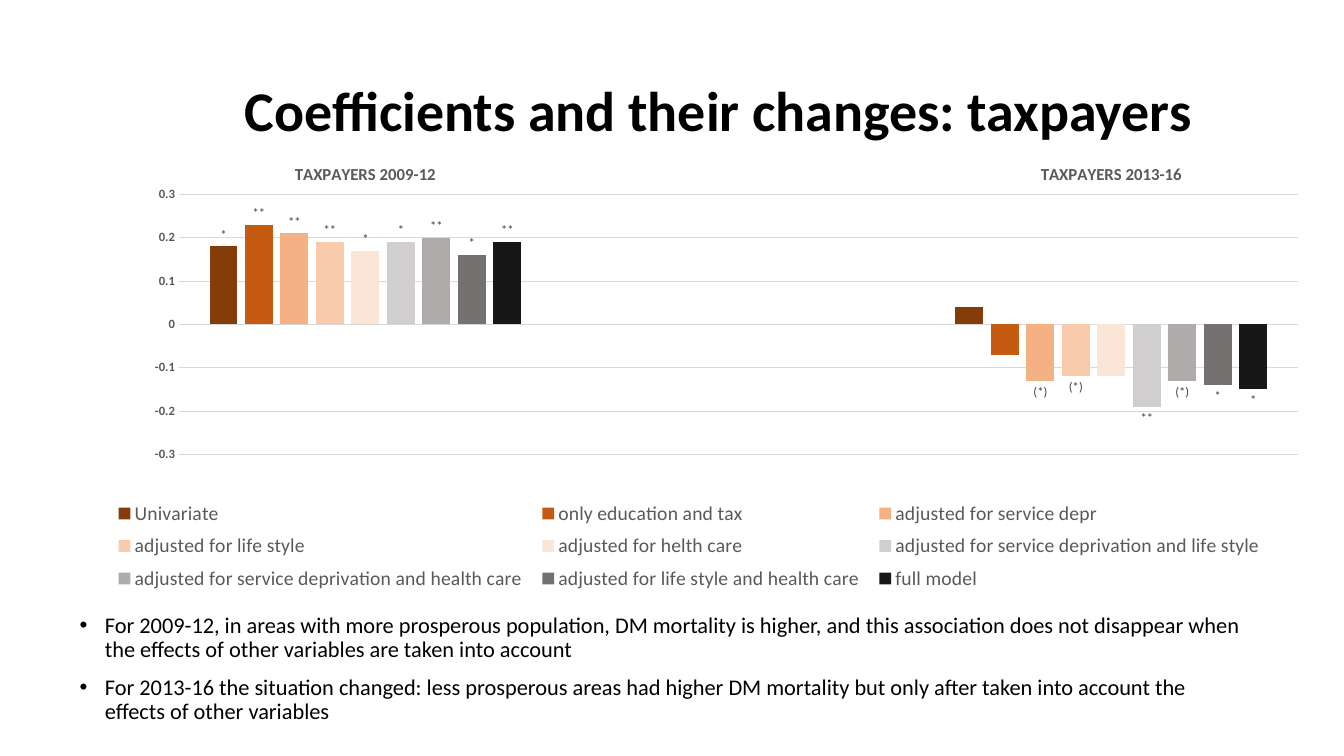
import pptx
import pptx.chart.data
import pptx.dml.color
import pptx.enum.chart
import pptx.enum.text
import pptx.oxml
import pptx.oxml.ns
import pptx.util

Cm = pptx.util.Cm
Pt = pptx.util.Pt
RGBColor = pptx.dml.color.RGBColor

BLACK = RGBColor(0x00, 0x00, 0x00)
LABEL_GREY = RGBColor(0x40, 0x40, 0x40)
AXIS_GREY = RGBColor(0x59, 0x59, 0x59)
GRID_GREY = RGBColor(0xD9, 0xD9, 0xD9)

PERIODS = ["TAXPAYERS 2009-12", "", "TAXPAYERS 2013-16"]
# Model, colour, coefficient and significance mark for each period
MODELS = [
    ("Univariate", RGBColor(0x84, 0x3C, 0x0B), 0.18, "*", 0.04, ""),
    ("only education and tax", RGBColor(0xC5, 0x5A, 0x11), 0.23, "**", -0.07, ""),
    ("adjusted for service depr", RGBColor(0xF4, 0xB1, 0x83), 0.21, "**", -0.13, "(*)"),
    ("adjusted for life style", RGBColor(0xF8, 0xCB, 0xAD), 0.19, "**", -0.12, "(*)"),
    ("adjusted for helth care", RGBColor(0xFB, 0xE5, 0xD6), 0.17, "*", -0.12, ""),
    ("adjusted for service deprivation and life style",
     RGBColor(0xD0, 0xCE, 0xCE), 0.19, "*", -0.19, "**"),
    ("adjusted for service deprivation and health care",
     RGBColor(0xAF, 0xAB, 0xAB), 0.2, "**", -0.13, "(*)"),
    ("adjusted for life style and health care",
     RGBColor(0x76, 0x71, 0x71), 0.16, "*", -0.14, "*"),
    ("full model", RGBColor(0x18, 0x17, 0x17), 0.19, "**", -0.15, "*"),
]
FINDINGS = [
    "For 2009-12, in areas with more prosperous population, DM mortality is higher, "
    "and this association does not disappear when the effects of other variables "
    "are taken into account",
    "For 2013-16 the situation changed: less prosperous areas had higher DM mortality "
    "but only after taken into account the effects of other variables",
]


def set_font(font, size, color, bold=False):
    values = {"name": "Calibri", "size": Pt(size), "bold": bold}
    for name, value in values.items():
        setattr(font, name, value)
    font.color.rgb = color


def place(sp, left, top, width, height):
    box = {"left": left, "top": top, "width": width, "height": height}
    for name, value in box.items():
        setattr(sp, name, Cm(value))
    sp.text_frame.auto_size = pptx.enum.text.MSO_AUTO_SIZE.NONE


prs = pptx.Presentation()
prs.slide_width = Cm(33.87)
prs.slide_height = Cm(19.05)
s = prs.slides.add_slide(prs.slide_layouts[1])

# Title
title = s.shapes.title
place(title, 4.67, 1.02, 26.87, 3.68)
tf = title.text_frame
tf.vertical_anchor = pptx.enum.text.MSO_ANCHOR.MIDDLE
p = tf.paragraphs[0]
p.alignment = pptx.enum.text.PP_ALIGN.CENTER
p.line_spacing = 0.9
r = p.add_run()
r.text = "Coefficients and their changes: taxpayers"
set_font(r.font, 40, BLACK, bold=True)

# Findings
body = s.placeholders[1]
place(body, 1.75, 15.34, 29.79, 3.25)
tf = body.text_frame
for i, finding in enumerate(FINDINGS):
    p = tf.paragraphs[0] if i == 0 else tf.add_paragraph()
    p.line_spacing = 0.9
    p.space_before = Pt(10)
    pPr = p._p.get_or_add_pPr()
    pPr.set("marL", str(Cm(0.64)))
    pPr.set("indent", str(-Cm(0.64)))
    r = p.add_run()
    r.text = finding
    set_font(r.font, 16, BLACK)

# Chart
data = pptx.chart.data.CategoryChartData(number_format="General")
data.categories = PERIODS
for name, color, early, early_mark, late, late_mark in MODELS:
    data.add_series(name, (early, None, late))
chart = s.shapes.add_chart(
    pptx.enum.chart.XL_CHART_TYPE.COLUMN_CLUSTERED,
    Cm(2.34), Cm(3.2), Cm(30.99), Cm(12.14), data,
).chart
chart.has_title = False
set_font(chart.font, 10, BLACK)

chart.has_legend = True
legend = chart.legend
legend.position = pptx.enum.chart.XL_LEGEND_POSITION.BOTTOM
legend.include_in_layout = False
set_font(legend.font, 14, AXIS_GREY)

cat_axis = chart.category_axis
val_axis = chart.value_axis
for axis, size in ((cat_axis, 12), (val_axis, 9)):
    axis.major_tick_mark = pptx.enum.chart.XL_TICK_MARK.NONE
    axis.minor_tick_mark = pptx.enum.chart.XL_TICK_MARK.NONE
    set_font(axis.tick_labels.font, size, AXIS_GREY, bold=True)
cat_axis.tick_label_position = pptx.enum.chart.XL_TICK_LABEL_POSITION.HIGH
val_axis.major_unit = 0.1
val_axis.has_major_gridlines = True
val_axis.format.line.fill.background()
for line in (cat_axis.format.line, val_axis.major_gridlines.format.line):
    line.color.rgb = GRID_GREY
    line.width = Pt(0.75)

plot = chart.plots[0]
plot.gap_width = 219
plot.overlap = -27
plot.vary_by_categories = False
for series, (name, color, early, early_mark, late, late_mark) in zip(plot.series, MODELS):
    series.format.fill.solid()
    series.format.fill.fore_color.rgb = color
    series.invert_if_negative = False
    series.data_labels.show_value = False
    for index, mark in ((0, early_mark), (2, late_mark)):
        if mark:
            label = series.points[index].data_label
            label.position = pptx.enum.chart.XL_LABEL_POSITION.OUTSIDE_END
            r = label.text_frame.paragraphs[0].add_run()
            r.text = mark
            set_font(r.font, 9, LABEL_GREY)

# Fixed plot area and legend, as fractions of the chart
plot_area = chart._chartSpace.chart.plotArea
layouts = [
    (plot_area, 0, '<c:layoutTarget val="inner"/>', {"x": 0.07, "y": 0.14, "w": 0.91, "h": 0.54}),
    (legend._element, 1, "", {"x": 0.01, "y": 0.76, "w": 0.95, "h": 0.22}),
]
for element, index, target, fractions in layouts:
    for old in element.findall(pptx.oxml.ns.qn("c:layout")):
        element.remove(old)
    sizes = "".join(f'<c:{key} val="{value}"/>' for key, value in fractions.items())
    element.insert(index, pptx.oxml.parse_xml(
        f'<c:layout {pptx.oxml.ns.nsdecls("c")}><c:manualLayout>{target}'
        f'<c:xMode val="edge"/><c:yMode val="edge"/>{sizes}</c:manualLayout></c:layout>'
    ))

prs.save("out.pptx")
